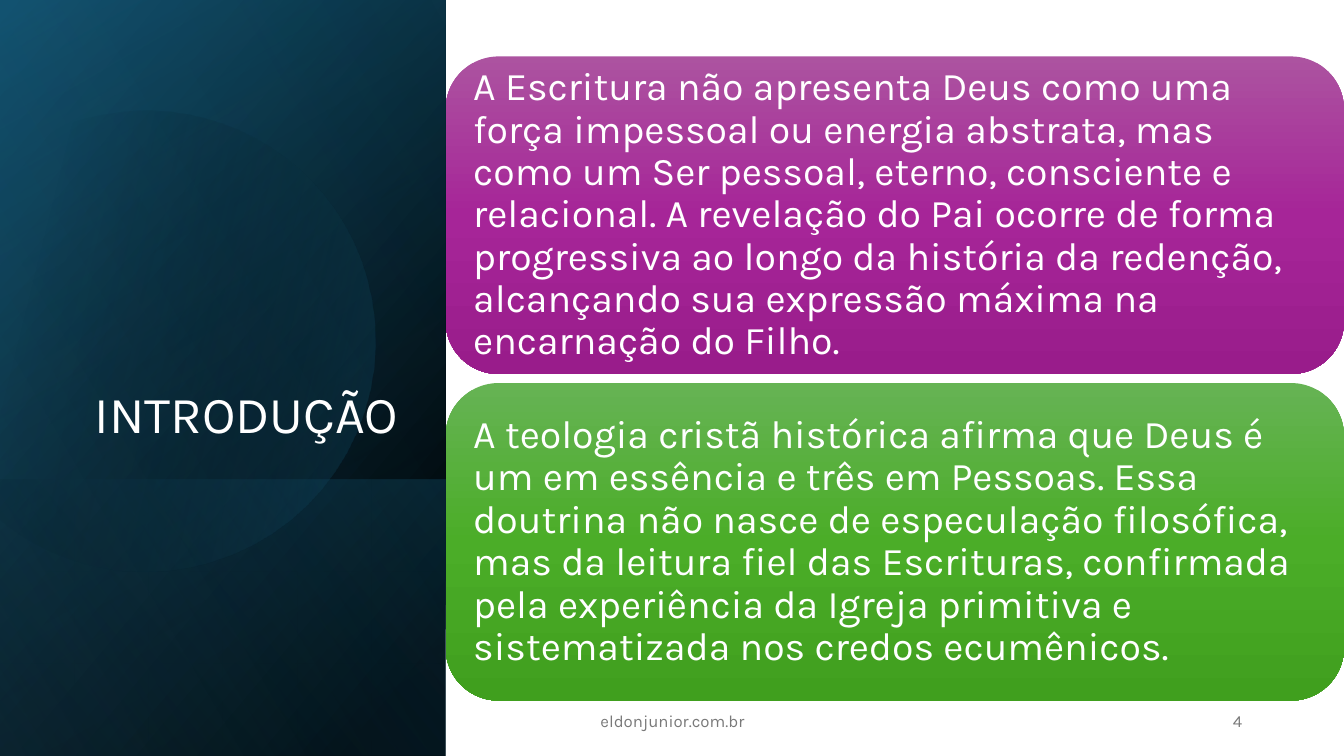
from math import cos, radians, sin

from lxml import etree
from pptx import Presentation
from pptx.dml.color import RGBColor
from pptx.enum.shapes import MSO_SHAPE
from pptx.enum.text import MSO_ANCHOR, MSO_AUTO_SIZE, PP_ALIGN
from pptx.oxml.ns import qn
from pptx.util import Inches, Pt

RECT, ROUNDED = MSO_SHAPE.RECTANGLE, MSO_SHAPE.ROUNDED_RECTANGLE
LEFT, CENTER, RIGHT = PP_ALIGN.LEFT, PP_ALIGN.CENTER, PP_ALIGN.RIGHT
MIDDLE, BOTTOM = MSO_ANCHOR.MIDDLE, MSO_ANCHOR.BOTTOM
NO_FIT = MSO_AUTO_SIZE.NONE

FONT = "Karla"
WHITE, GRAY = "FFFFFF", "797979"
SLIDE_W, SLIDE_H = 13.33, 7.5
SIDEBAR_W = 4.42

PANELS = [
    ("A Escritura não apresenta Deus como uma força impessoal ou energia abstrata, "
     "mas como um Ser pessoal, eterno, consciente e relacional. A revelação do Pai "
     "ocorre de forma progressiva ao longo da história da redenção, alcançando sua "
     "expressão máxima na encarnação do Filho.",
     ["AC53A0", "A62598", "991C8B"]),
    ("A teologia cristã histórica afirma que Deus é um em essência e três em Pessoas. "
     "Essa doutrina não nasce de especulação filosófica, mas da leitura fiel das "
     "Escrituras, confirmada pela experiência da Igreja primitiva e sistematizada nos "
     "credos ecumênicos.",
     ["66B354", "4BAD28", "409F1E"]),
]

DISC_START = (1.49, 1.1)
DISC_RIGHT = [
    [(2.46, 1.12), (3.35, 1.77), (3.63, 2.75)],
    [(3.98, 3.97), (3.28, 5.23), (2.07, 5.58)],
    [(1.31, 5.8), (0.53, 5.61), (-0.03, 5.14)],
]
DISC_EDGE = [(-0.15, 5.03), (-0.15, 1.75), (0, 1.61)]
DISC_TOP = [
    [(0.23, 1.42), (0.5, 1.28), (0.8, 1.19)],
    [(1.03, 1.13), (1.26, 1.1), (1.49, 1.1)],
]
DISC_CENTER = (1.58, 3.35)
DISC_TURN = 343.9


def rgb(value):
    """Return the colour of a hex string."""
    return RGBColor.from_string(value)


def set_gradient(sp, stops, angle):
    """Fill a shape with (position, colour, opacity) stops and remove its line."""
    sp.shadow.inherit = False
    sp.line.fill.background()
    sp.fill.gradient()
    grad = sp._element.spPr.find(qn("a:gradFill"))
    stop_list = grad.find(qn("a:gsLst"))
    for old in list(stop_list):
        stop_list.remove(old)
    for position, color, opacity in stops:
        gs = etree.SubElement(stop_list, qn("a:gs"), pos=str(position * 1000))
        clr = etree.SubElement(gs, qn("a:srgbClr"), val=color)
        if opacity < 100:
            etree.SubElement(clr, qn("a:alpha"), val=str(opacity * 1000))
    grad.find(qn("a:lin")).set("ang", str(angle * 60000))


def set_text(sp, text, size, color=WHITE, align=LEFT, anchor=MIDDLE, spacing=1.0, inset=None):
    """Write one formatted paragraph into a shape."""
    tf = sp.text_frame
    tf.word_wrap = True
    tf.auto_size = NO_FIT
    tf.vertical_anchor = anchor
    if inset is not None:
        tf.margin_left = tf.margin_right = tf.margin_top = tf.margin_bottom = Inches(inset)
    p = tf.paragraphs[0]
    p.alignment = align
    p.line_spacing = spacing
    r = p.add_run()
    r.text = text
    r.font.name = FONT
    r.font.size = Pt(size)
    r.font.color.rgb = rgb(color)


def add_layer(s, x, y, w, h, stops, angle):
    """Cover a box with a mirrored rectangle turned by 90 degrees."""
    sp = s.shapes.add_shape(RECT, Inches(x + (w - h) / 2), Inches(y + (h - w) / 2),
                            Inches(h), Inches(w))
    sp.rotation = 90
    sp._element.spPr.get_or_add_xfrm().set("flipH", "1")
    set_gradient(sp, stops, angle)


def trace_curves(start, curves, steps=16):
    """Return points along a chain of cubic curves."""
    points = []
    for a, b, end in curves:
        for i in range(1, steps + 1):
            t = i / steps
            u = 1 - t
            points.append(tuple(
                u ** 3 * p0 + 3 * u * u * t * p1 + 3 * u * t * t * p2 + t ** 3 * p3
                for p0, p1, p2, p3 in zip(start, a, b, end)))
        start = end
    return points


def turn(point, center, degrees):
    """Turn a point clockwise about a centre."""
    angle = radians(degrees)
    dx, dy = point[0] - center[0], point[1] - center[1]
    return (center[0] + dx * cos(angle) - dy * sin(angle),
            center[1] + dx * sin(angle) + dy * cos(angle))


def add_disc(s, x, y):
    """Draw the cut disc of the sidebar whose corner is at x, y."""
    outline = [DISC_START] + trace_curves(DISC_START, DISC_RIGHT) + DISC_EDGE
    outline += trace_curves(DISC_EDGE[-1], DISC_TOP)
    points = [turn(point, DISC_CENTER, -DISC_TURN) for point in outline]
    points = [(Inches(x + px), Inches(y + py)) for px, py in points]
    builder = s.shapes.build_freeform(*points[0])
    builder.add_line_segments(points[1:], close=True)
    sp = builder.convert_to_shape()
    sp.rotation = DISC_TURN
    set_gradient(sp, [(29, "000000", 0), (100, "156082", 43)], 30)


def add_sidebar(s, x, y, w, h):
    """Draw the dark sidebar and place the title on it."""
    band_h = 2.74
    add_layer(s, x, y, w, h, [(8, "000000", 100), (100, "104862", 100)], 50)
    add_layer(s, x, y, w, h, [(0, "000000", 0), (99, "156082", 46)], 30)
    add_layer(s, x, y + h - band_h, w, band_h,
              [(2, "156082", 29), (100, "000000", 30)], 130)
    add_disc(s, x, y)
    add_layer(s, x, y, w, h, [(0, "000000", 0), (99, "46B1E1", 11)], 120)

    title = s.shapes.title
    title.left, title.top = Inches(x + 0.64), Inches(y + 1.84)
    title.width, title.height = Inches(3.41), Inches(2.62)
    set_text(title, "INTRODUÇÃO", 37, align=RIGHT, anchor=BOTTOM, spacing=0.9)
    s.shapes._spTree.append(title._element)


def add_panels(s, x, y, w, h, gap=0.09):
    """Stack the text panels evenly in a box."""
    panel_h = (h - gap * (len(PANELS) - 1)) / len(PANELS)
    for i, (text, colors) in enumerate(PANELS):
        sp = s.shapes.add_shape(ROUNDED, Inches(x), Inches(y + i * (panel_h + gap)),
                                Inches(w), Inches(panel_h))
        set_gradient(sp, [(50 * k, color, 100) for k, color in enumerate(colors)], 90)
        set_text(sp, text, 28, spacing=0.9, inset=0.12)


def add_footer(s, x, y, h):
    """Write the site address and the page number in one row."""
    for text, dx, w, align in [("eldonjunior.com.br", 0, 4.5, CENTER), ("4", 5, 3, RIGHT)]:
        box = s.shapes.add_textbox(Inches(x + dx), Inches(y), Inches(w), Inches(h))
        set_text(box, text, 12, color=GRAY, align=align)


def main():
    """Build the slide and save it."""
    prs = Presentation()
    prs.slide_width, prs.slide_height = Inches(SLIDE_W), Inches(SLIDE_H)
    s = prs.slides.add_slide(prs.slide_layouts[5])
    add_sidebar(s, 0, 0, SIDEBAR_W, SLIDE_H)
    add_panels(s, SIDEBAR_W, 0.56, SLIDE_W - SIDEBAR_W, 6.39)
    add_footer(s, SIDEBAR_W, 6.95, 0.4)
    prs.save("out.pptx")


if __name__ == "__main__":
    main()
